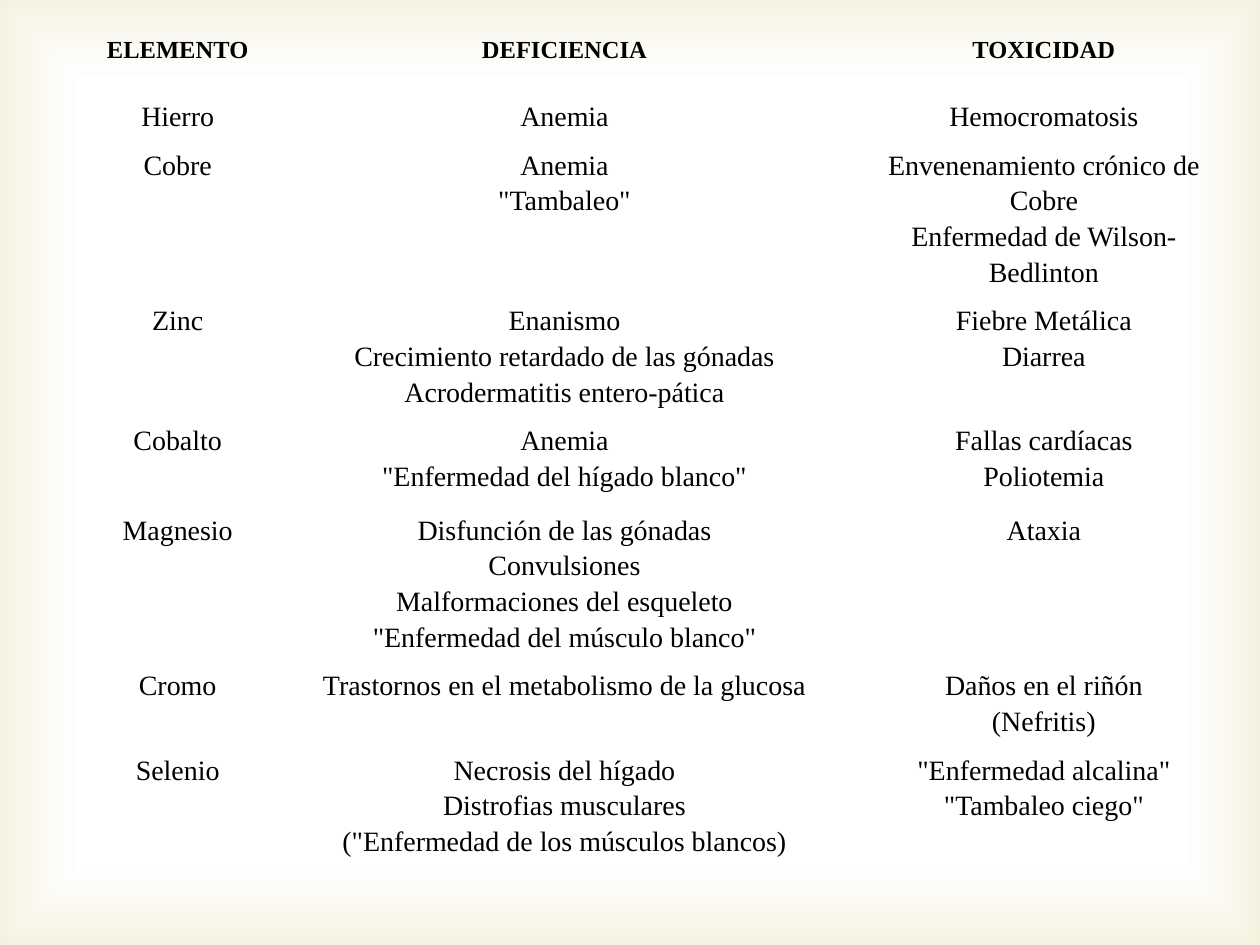
"""Build a slide with a table of mineral deficiencies and toxicities."""
from lxml import etree
from pptx import Presentation
from pptx import util as u
from pptx.dml.color import RGBColor
from pptx.enum import shapes, text
from pptx.oxml import ns, parse_xml

BLACK = RGBColor(0x00, 0x00, 0x00)
WHITE = RGBColor(0xFF, 0xFF, 0xFF)
OLIVE = RGBColor(0xD1, 0xCA, 0x75)
FONT = "Times New Roman"
PLAIN_STYLE = "{2D5ABB26-0587-4C30-8999-92F81FD0307C}"
WIDTH, HEIGHT = u.Inches(10), u.Inches(7.5)
LEFT, TOP = u.Inches(0.59), u.Inches(0.21)
MARGIN, INDENT = u.Inches(0.05), u.Inches(0.04)
COLUMNS = [1.6, 4.54, 3.07]
ROWS = [0.51, 0.31, 0.91, 0.91, 0.71, 1.1, 0.51, 0.91, 0.51]
GLOW_STOPS = [(83, WHITE, 11), (100, OLIVE, 23)]
HEADINGS = ["ELEMENTO", "DEFICIENCIA", "TOXICIDAD"]
MINERALS = [
    ["Hierro", "Anemia", "Hemocromatosis"],
    ["Cobre", 'Anemia\n"Tambaleo"',
     "Envenenamiento crónico de Cobre\nEnfermedad de Wilson-Bedlinton"],
    ["Zinc", "Enanismo\nCrecimiento retardado de las gónadas\nAcrodermatitis entero-pática",
     "Fiebre Metálica\nDiarrea"],
    ["Cobalto", 'Anemia\n"Enfermedad del hígado blanco"', "Fallas cardíacas\nPoliotemia"],
    ["Magnesio",
     "Disfunción de las gónadas\nConvulsiones\nMalformaciones del esqueleto\n"
     '"Enfermedad del músculo blanco"', "Ataxia"],
    ["Cromo", "Trastornos en el metabolismo de la glucosa", "Daños en el riñón\n(Nefritis)"],
    ["Selenio",
     'Necrosis del hígado\nDistrofias musculares\n("Enfermedad de los músculos blancos)',
     '"Enfermedad alcalina"\n"Tambaleo ciego"'],
]


def add_glow(slide):
    """Cover the slide with a translucent gradient that darkens to the edges."""
    shape = slide.shapes.add_shape(shapes.MSO_SHAPE.RECTANGLE, 0, 0, WIDTH, HEIGHT)
    shape.shadow.inherit = False
    shape.line.fill.background()
    stops = "".join(
        f'<a:gs pos="{place * 1000}"><a:srgbClr val="{color}">'
        f'<a:alpha val="{alpha * 1000}"/></a:srgbClr></a:gs>'
        for place, color, alpha in GLOW_STOPS)
    gradient = parse_xml(
        f'<a:gradFill {ns.nsdecls("a")} rotWithShape="1"><a:gsLst>{stops}</a:gsLst>'
        '<a:path path="rect"><a:fillToRect l="50000" t="50000" r="50000" b="50000"/>'
        '</a:path></a:gradFill>')
    shape.element.spPr.find(ns.qn("a:prstGeom")).addnext(gradient)


def style_cell(cell):
    """Clear the cell's fill and set its margins."""
    cell.fill.background()
    cell.margin_left = cell.margin_right = MARGIN
    cell.margin_top = cell.margin_bottom = MARGIN


def write_cell(cell, content, size, bold):
    """Write each line of the content as a centred paragraph."""
    frame = cell.text_frame
    for index, line in enumerate(content.split("\n")):
        paragraph = frame.add_paragraph() if index else frame.paragraphs[0]
        paragraph.alignment = text.PP_ALIGN.CENTER
        paragraph.line_spacing = 1.15
        properties = paragraph._p.get_or_add_pPr()
        properties.set("marL", str(INDENT))
        properties.set("indent", "0")
        run = paragraph.add_run()
        run.text = line
        run.font.name = FONT
        run.font.size = u.Pt(size)
        run.font.bold = bold
        run.font.color.rgb = BLACK


def add_mineral_table(slide):
    """Add the unstyled table with its headings, minerals and merged last row."""
    frame = slide.shapes.add_table(len(ROWS), len(COLUMNS), LEFT, TOP,
                                   u.Inches(sum(COLUMNS)), u.Inches(sum(ROWS)))
    table = frame.table
    table.first_row = table.horz_banding = False
    table._tbl.tblPr.find(ns.qn("a:tableStyleId")).text = PLAIN_STYLE
    for column, width in zip(table.columns, COLUMNS):
        column.width = u.Inches(width)
    for row, height in zip(table.rows, ROWS):
        row.height = u.Inches(height)
    for cell in table.iter_cells():
        style_cell(cell)
    for row, contents in enumerate([HEADINGS] + MINERALS):
        for column, content in enumerate(contents):
            write_cell(table.cell(row, column), content, 16 if row else 14, row == 0)
    last = len(ROWS) - 1
    table.cell(last, 0).merge(table.cell(last, len(COLUMNS) - 1))


def main():
    """Build and save the presentation."""
    presentation = Presentation()
    presentation.slide_width, presentation.slide_height = WIDTH, HEIGHT
    slide = presentation.slides.add_slide(presentation.slide_layouts[6])
    slide.background.fill.solid()
    slide.background.fill.fore_color.rgb = WHITE
    add_glow(slide)
    add_mineral_table(slide)
    presentation.save("out.pptx")


if __name__ == "__main__":
    main()
